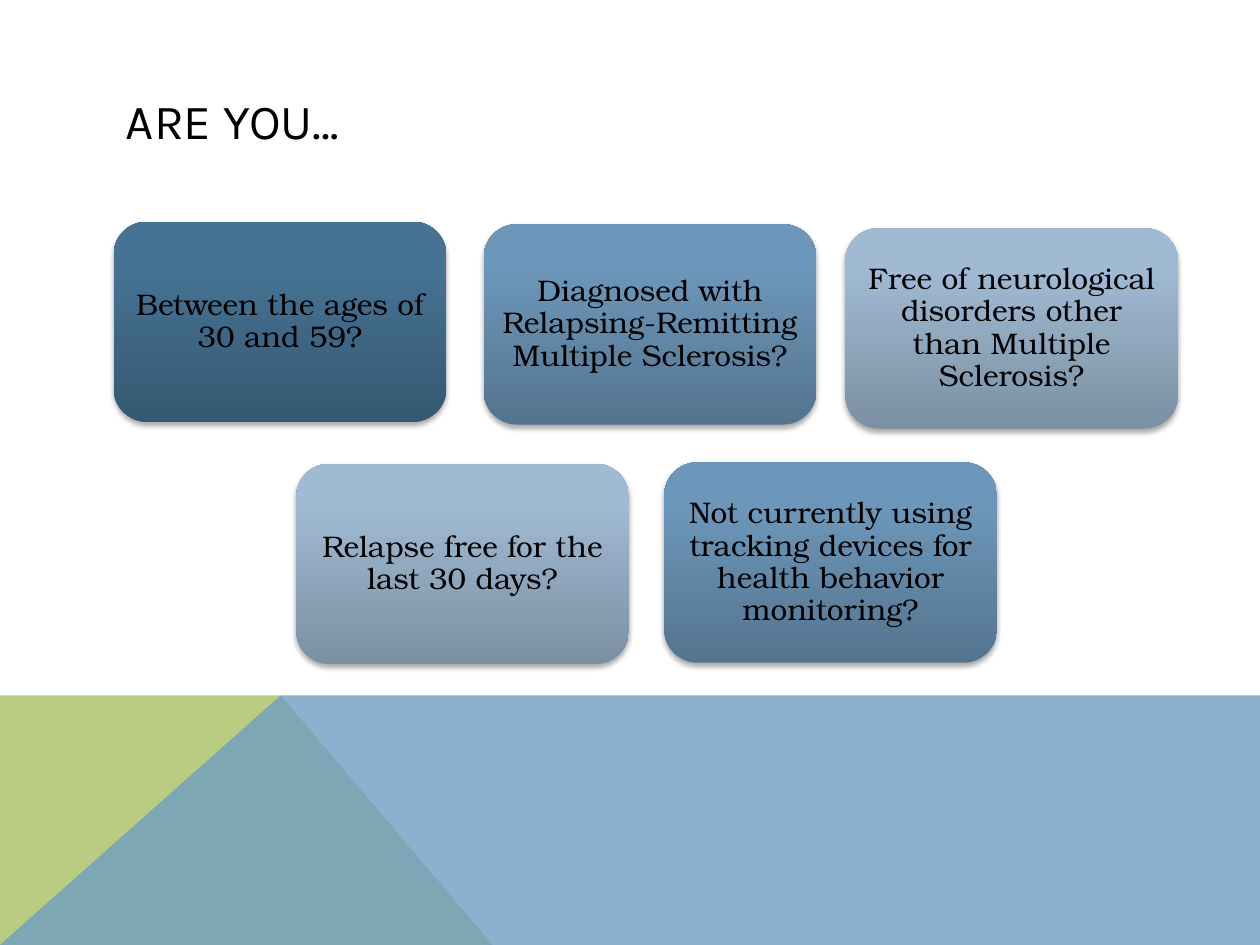
"""Build the study eligibility slide with five question cards."""
from copy import deepcopy

from lxml.etree import SubElement
from pptx import Presentation
from pptx.dml.color import RGBColor as RGB
from pptx.enum.shapes import MSO_SHAPE as SHAPE
from pptx.enum.text import MSO_ANCHOR as ANCHOR, PP_ALIGN as ALIGN
from pptx.oxml.ns import qn
from pptx.util import Cm, Pt

COLORS = {
    "text": "000000",
    "green": "BACC82",
    "blue": "6E9EC2",
    "dark": ("365872", "467394", "457396"),
    "medium": ("54748F", "6D97BA", "6C98BC"),
    "light": ("7B90A2", "A0BAD3", "A0BBD4"),
}
WIDTH, HEIGHT = 25.4, 19.05
BAND_TOP, PEAK = 14.02, 5.66
CARD_WIDTH, CARD_HEIGHT = 6.71, 4.04

deck = Presentation()
deck.slide_width, deck.slide_height = Cm(WIDTH), Cm(HEIGHT)
slide = deck.slides.add_slide(deck.slide_layouts[6])


def add_band(color, corners):
    start, *rest = [(Cm(x), Cm(y)) for x, y in corners]
    outline = slide.shapes.build_freeform(*start)
    outline.add_line_segments(rest, close=True)
    band = outline.convert_to_shape()
    band.shadow.inherit = False
    band.fill.solid()
    band.fill.fore_color.rgb = RGB.from_string(COLORS[color])
    band.line.fill.background()
    return band


def write(frame, words, font_name, size):
    frame.word_wrap = True
    frame.vertical_anchor = ANCHOR.MIDDLE
    paragraph = frame.paragraphs[0]
    paragraph.text = words
    paragraph.font.name = font_name
    paragraph.font.size = Pt(size)
    paragraph.font.color.rgb = RGB.from_string(COLORS["text"])
    return paragraph


add_band("green", [(0, HEIGHT), (0, BAND_TOP), (PEAK, BAND_TOP), (9.93, HEIGHT)])
water = add_band("blue", [(0, HEIGHT), (PEAK, BAND_TOP), (WIDTH, BAND_TOP), (WIDTH, HEIGHT)])
water_color = water._element.spPr.find(f"{qn('a:solidFill')}/{qn('a:srgbClr')}")
SubElement(water_color, qn("a:alpha"), val="80000")

title = slide.shapes.add_textbox(Cm(2.29), Cm(1.4), Cm(20.88), Cm(2.03))
write(title.text_frame, "ARE YOU…", "Karla", 28)

questions = [
    (2.29, 4.47, "dark", "Between the ages of 30 and 59?"),
    (9.75, 4.52, "medium", "Diagnosed with Relapsing-Remitting Multiple Sclerosis?"),
    (17.04, 4.6, "light", "Free of neurological disorders other than Multiple Sclerosis?"),
    (5.97, 9.35, "light", "Relapse free for the last 30 days?"),
    (13.39, 9.32, "medium",
     "Not currently using tracking devices for health behavior monitoring?"),
]
for left, top, tone, question in questions:
    card = slide.shapes.add_shape(
        SHAPE.FLOWCHART_ALTERNATE_PROCESS,
        Cm(left), Cm(top), Cm(CARD_WIDTH), Cm(CARD_HEIGHT))
    card.line.fill.background()

    card.fill.gradient()
    card.fill.gradient_angle = 90
    properties = card._element.spPr
    stops = properties.find(f"{qn('a:gradFill')}/{qn('a:gsLst')}")
    stops.append(deepcopy(stops[-1]))
    for stop, position, shade in zip(card.fill.gradient_stops, (0, 0.8, 1), COLORS[tone]):
        stop.position = position
        stop.color.rgb = RGB.from_string(shade)

    card.shadow.inherit = False
    shadow = SubElement(properties.find(qn("a:effectLst")), qn("a:outerShdw"),
                        blurRad=str(Pt(3.1)), dist=str(Pt(1.8)), dir="5400000", rotWithShape="0")
    shadow_color = SubElement(shadow, qn("a:srgbClr"), val=COLORS["text"])
    SubElement(shadow_color, qn("a:alpha"), val="35000")

    frame = card.text_frame
    frame.margin_left = frame.margin_right = frame.margin_top = frame.margin_bottom = Cm(0.18)
    paragraph = write(frame, question, "TeX Gyre Bonum", 17)
    paragraph.alignment = ALIGN.CENTER
    paragraph.line_spacing = 0.9

deck.save("out.pptx")
